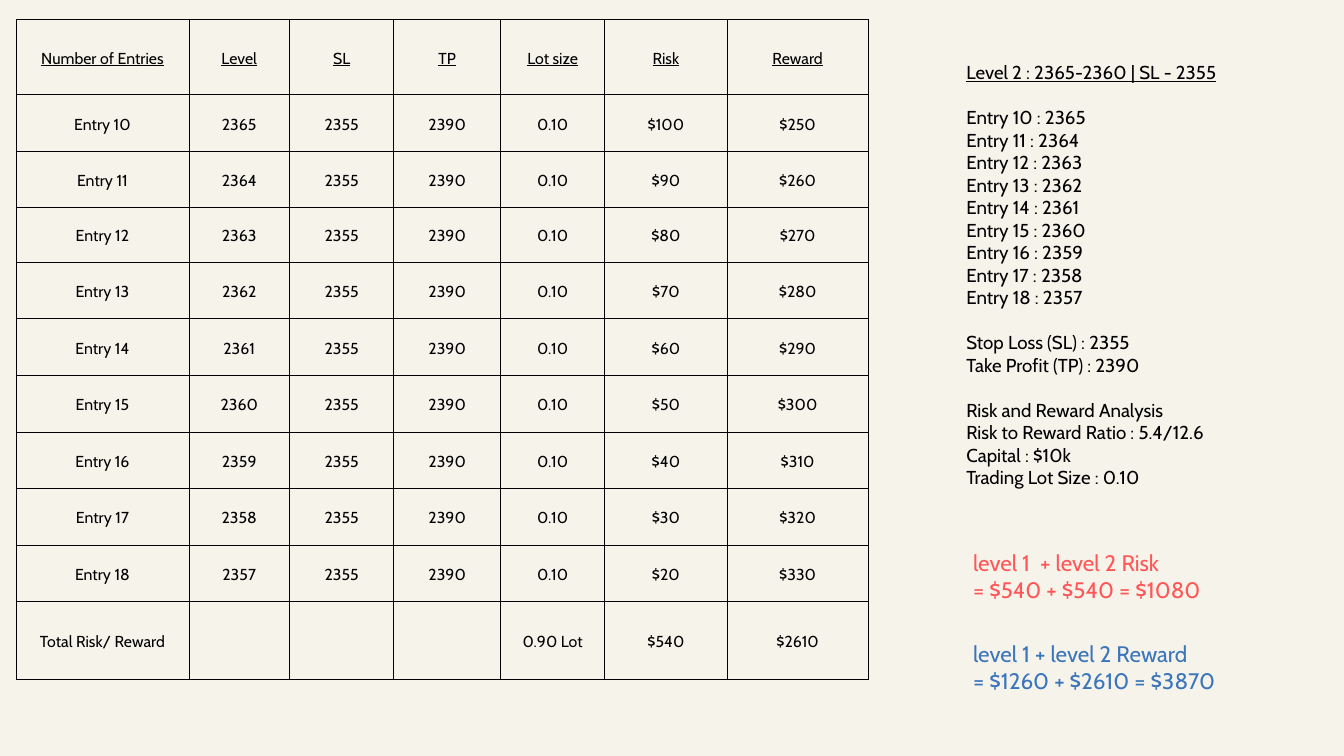
from dataclasses import dataclass

from lxml import etree
from pptx import Presentation
from pptx import util as u
from pptx.dml.color import RGBColor
from pptx.enum import text
from pptx.oxml.ns import qn

BACKGROUND = RGBColor(0xF6, 0xF3, 0xEB)
BLACK = RGBColor(0x00, 0x00, 0x00)
RED = RGBColor(0xFF, 0x57, 0x57)
BLUE = RGBColor(0x3B, 0x75, 0xBA)
FONT = "Cabin"

STOP_LOSS, TAKE_PROFIT = 2355, 2390
FIRST_ENTRY, FIRST_LEVEL, ENTRY_COUNT = 10, 2365, 9
DOLLARS_PER_POINT = 10  # at a lot size of 0.10

HEADINGS = ["Number of Entries", "Level", "SL", "TP", "Lot size", "Risk", "Reward"]
COLUMN_WIDTHS = [2.57, 1.5, 1.55, 1.59, 1.55, 1.82, 2.1]
ROW_HEIGHTS = [1.12, 0.84, 0.84, 0.81, 0.84, 0.85, 0.84, 0.84, 0.84, 0.84, 1.16]


@dataclass(frozen=True)
class Entry:
    name: str
    level: int

    @property
    def risk(self) -> int:
        return (self.level - STOP_LOSS) * DOLLARS_PER_POINT

    @property
    def reward(self) -> int:
        return (TAKE_PROFIT - self.level) * DOLLARS_PER_POINT

    def cells(self) -> list[str]:
        return [self.name, str(self.level), str(STOP_LOSS), str(TAKE_PROFIT),
                "0.10", f"${self.risk}", f"${self.reward}"]


@dataclass(frozen=True)
class TextStyle:
    size: float
    line_spacing: float
    color: RGBColor = BLACK


@dataclass(frozen=True)
class Note:
    left: float
    top: float
    width: float
    height: float
    style: TextStyle
    groups: list[list[str]]
    underline_first: bool = False


TABLE_STYLE = TextStyle(17, 23.8)
ENTRIES = [Entry(f"Entry {FIRST_ENTRY + i}", FIRST_LEVEL - i) for i in range(ENTRY_COUNT)]
TOTAL_RISK = sum(entry.risk for entry in ENTRIES)
TOTAL_REWARD = sum(entry.reward for entry in ENTRIES)
TOTALS = ["Total Risk/ Reward", "", "", "", "0.90 Lot", f"${TOTAL_RISK}", f"${TOTAL_REWARD}"]

NOTES = [
    Note(14.38, 0.91, 5.08, 6.34, TextStyle(20, 24.1), [
        ["Level 2 : 2365-2360 | SL - 2355"],
        [f"{entry.name} : {entry.level}" for entry in ENTRIES],
        [f"Stop Loss (SL) : {STOP_LOSS}", f"Take Profit (TP) : {TAKE_PROFIT}"],
        ["Risk and Reward Analysis", "Risk to Reward Ratio : 5.4/12.6",
         "Capital : $10k", "Trading Lot Size : 0.10"],
    ], underline_first=True),
    Note(14.48, 8.17, 4.56, 0.78, TextStyle(24, 28.8, RED),
         [["level 1  + level 2 Risk", "= $540 + $540 = $1080"]]),
    Note(14.48, 9.52, 4.69, 0.78, TextStyle(24, 28.8, BLUE),
         [["level 1 + level 2 Reward", "= $1260 + $2610 = $3870"]]),
]


def write_line(paragraph, content: str, style: TextStyle, underline: bool = False) -> None:
    paragraph.line_spacing = u.Pt(style.line_spacing)
    run = paragraph.add_run()
    run.text = content
    run.font.name = FONT
    run.font.size = u.Pt(style.size)
    run.font.color.rgb = style.color
    run.font.underline = underline


def add_note(slide, note: Note) -> None:
    """Add a text box whose groups of lines stand one line apart."""
    shape = slide.shapes.add_textbox(u.Inches(note.left), u.Inches(note.top),
                                     u.Inches(note.width), u.Inches(note.height))
    frame = shape.text_frame
    frame.word_wrap = True
    frame.auto_size = text.MSO_AUTO_SIZE.SHAPE_TO_FIT_TEXT
    frame.margin_left = frame.margin_top = frame.margin_right = frame.margin_bottom = 0
    for group_index, group in enumerate(note.groups):
        for line_index, line in enumerate(group):
            is_first = group_index == line_index == 0
            paragraph = frame.paragraphs[0] if is_first else frame.add_paragraph()
            if group_index and not line_index:
                paragraph.space_before = u.Pt(note.style.line_spacing)
            write_line(paragraph, line, note.style, note.underline_first and is_first)


def add_borders(cell) -> None:
    properties = cell._tc.get_or_add_tcPr()
    for side in ("a:lnL", "a:lnR", "a:lnT", "a:lnB"):
        line = etree.SubElement(properties, qn(side), w=str(u.Pt(0.75)))
        fill = etree.SubElement(line, qn("a:solidFill"))
        etree.SubElement(fill, qn("a:srgbClr"), val=str(BLACK))


def fill_cell(cell, content: str, is_heading: bool) -> None:
    add_borders(cell)
    cell.fill.background()
    cell.vertical_anchor = text.MSO_ANCHOR.MIDDLE
    cell.margin_left = cell.margin_right = u.Inches(0.21)
    cell.margin_top = cell.margin_bottom = u.Inches(0.21)
    if content:
        paragraph = cell.text_frame.paragraphs[0]
        paragraph.alignment = text.PP_ALIGN.CENTER
        write_line(paragraph, content, TABLE_STYLE, is_heading)


def add_entry_table(slide) -> None:
    rows = [HEADINGS, *(entry.cells() for entry in ENTRIES), TOTALS]
    table = slide.shapes.add_table(
        len(rows), len(HEADINGS), u.Inches(0.24), u.Inches(0.29),
        u.Inches(sum(COLUMN_WIDTHS)), u.Inches(sum(ROW_HEIGHTS))).table
    table.first_row = table.horz_banding = False
    for column, width in zip(table.columns, COLUMN_WIDTHS):
        column.width = u.Inches(width)
    for row_index, (row, height) in enumerate(zip(rows, ROW_HEIGHTS)):
        table.rows[row_index].height = u.Inches(height)
        for column_index, content in enumerate(row):
            fill_cell(table.cell(row_index, column_index), content, row_index == 0)


def main() -> None:
    presentation = Presentation()
    presentation.slide_width = u.Inches(20)
    presentation.slide_height = u.Inches(11.25)
    slide = presentation.slides.add_slide(presentation.slide_layouts[6])
    slide.background.fill.solid()
    slide.background.fill.fore_color.rgb = BACKGROUND
    add_entry_table(slide)
    for note in NOTES:
        add_note(slide, note)
    presentation.save("out.pptx")


if __name__ == "__main__":
    main()
